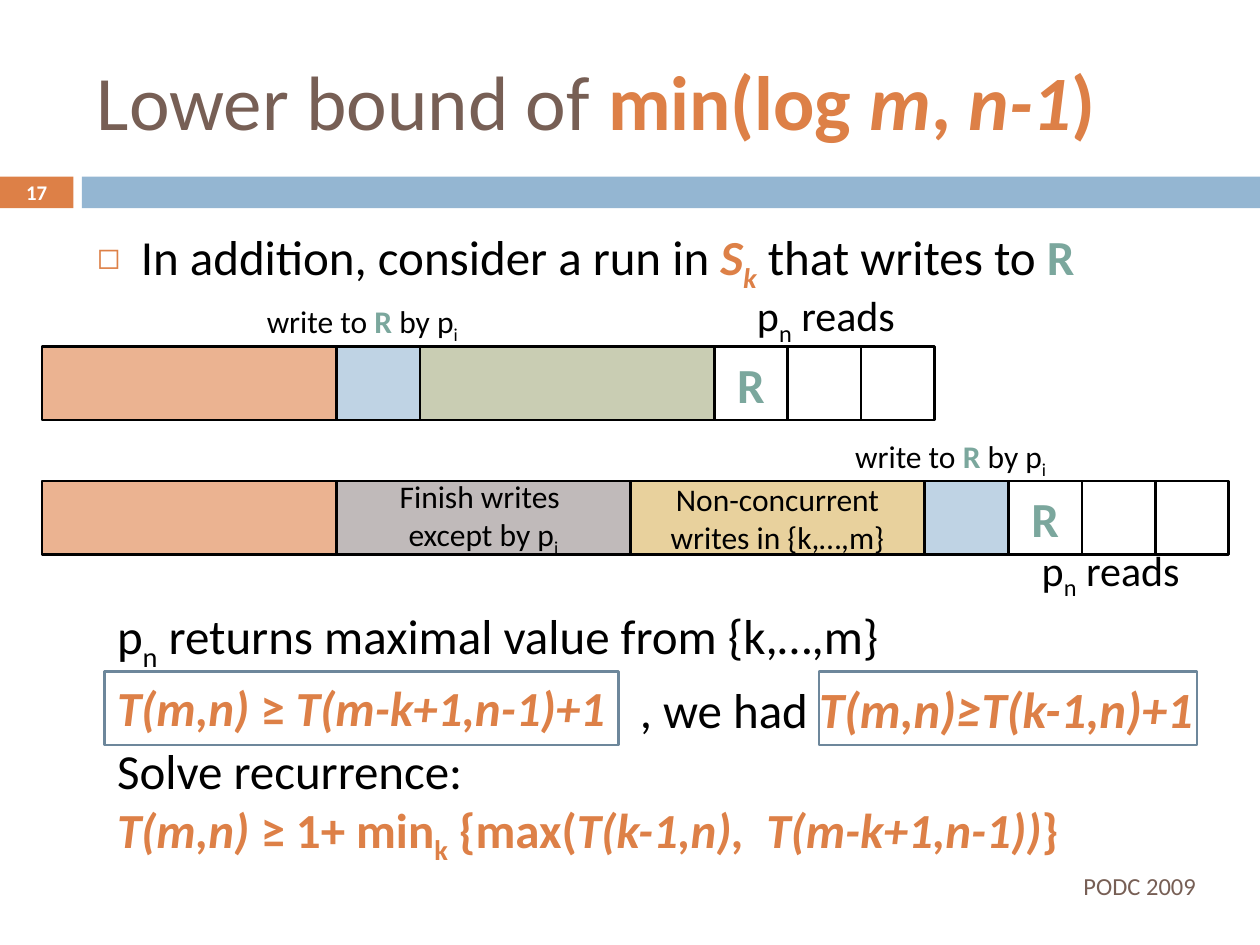
import pptx
import pptx.util
import pptx.dml.color
import pptx.enum.shapes
import pptx.enum.text
import lxml.etree

Cm = pptx.util.Cm
ALIGN = pptx.enum.text.PP_ALIGN
ANCHOR = pptx.enum.text.MSO_ANCHOR
COLOURS = {
    "black": "000000", "white": "FFFFFF", "brown": "775F55",
    "orange": "DD8047", "blue": "94B6D2", "teal": "7BA79D",
    "peach": "EBB391", "sky": "BFD3E4", "sage": "C9CDB3",
    "grey": "C0BABA", "sand": "E8D19D", "slate": "6D879B",
}

deck = pptx.Presentation()
deck.slide_width, deck.slide_height = Cm(25.4), Cm(19.05)
slide = deck.slides.add_slide(deck.slide_layouts[6])


def add_box(left, top, width, height, fill=None, line=None):
    box = slide.shapes.add_shape(
        pptx.enum.shapes.MSO_SHAPE.RECTANGLE, Cm(left), Cm(top), Cm(width), Cm(height))
    box.shadow.inherit = False
    if fill:
        box.fill.solid()
        box.fill.fore_color.rgb = pptx.dml.color.RGBColor.from_string(COLOURS[fill])
    else:
        box.fill.background()
    if line:
        box.line.color.rgb = pptx.dml.color.RGBColor.from_string(COLOURS[line])
        box.line.width = pptx.util.Pt(1.5)
    else:
        box.line.fill.background()
    return box


def write(target, lines, size, align=ALIGN.LEFT, anchor=ANCHOR.TOP, wrap=True):
    if isinstance(target, tuple):
        target = slide.shapes.add_textbox(*map(Cm, target))
    frame = target.text_frame
    frame.word_wrap = wrap
    frame.vertical_anchor = anchor
    for number, pieces in enumerate(lines):
        paragraph = frame.add_paragraph() if number else frame.paragraphs[0]
        paragraph.alignment = align
        for text, colour, style in pieces:
            run = paragraph.add_run()
            run.text = text
            run.font.name = "Calibri"
            run.font.size = pptx.util.Pt(size)
            run.font.color.rgb = pptx.dml.color.RGBColor.from_string(COLOURS[colour])
            run.font.bold = "b" in style
            run.font.italic = "i" in style
            if "s" in style:
                run.font._element.set("baseline", "-25000")
    return frame


add_box(0, 3.56, 1.48, 0.64, "orange")
add_box(1.65, 3.56, 23.75, 0.64, "blue")
write((0, 3.53, 1.48, 0.69), [[("17", "white", "b")]], 11.9, ALIGN.CENTER, ANCHOR.MIDDLE)
write((1.7, 0.64, 22.66, 2.74), [[
    ("Lower bound of ", "brown", ""), ("min(log ", "orange", "b"), ("m", "orange", "bi"),
    (", ", "orange", "b"), ("n-1", "orange", "bi"), (")", "orange", "b"),
]], 44, anchor=ANCHOR.MIDDLE)
write((16.94, 17.35, 7.42, 1.02), [[("PODC 2009", "brown", "")]], 14,
      ALIGN.RIGHT, ANCHOR.MIDDLE)

addition = write((1.7, 4.45, 22.66, 1.6), [[
    ("In addition, consider a run in ", "black", ""), ("S", "orange", "bi"),
    ("k", "orange", "bis"), (" that writes to ", "black", ""), ("R", "teal", "b"),
]], 28).paragraphs[0]
addition.space_before = pptx.util.Pt(7)
bullet = addition._p.get_or_add_pPr()
bullet.set("marL", str(Cm(0.89)))
bullet.set("indent", str(-Cm(0.89)))
namespace = "{http://schemas.openxmlformats.org/drawingml/2006/main}"
bullet_colour = lxml.etree.SubElement(bullet, namespace + "buClr")
lxml.etree.SubElement(bullet_colour, namespace + "srgbClr", val=COLOURS["orange"])
lxml.etree.SubElement(bullet, namespace + "buSzPct", val="60000")
lxml.etree.SubElement(bullet, namespace + "buChar", char="◻")

LONG, SHORT, CELL, ROW_HEIGHT = 5.93, 1.69, 1.48, 1.48
finish_writes = [[("Finish writes ", "black", "")],
                 [("except by p", "black", ""), ("i", "black", "s")]]
later_writes = [[("Non-concurrent writes in {k,…,m}", "black", "")]]
register = [[("R", "teal", "b")]]
registers = [(CELL, None, register, 28), (CELL, None, None, 0), (CELL, None, None, 0)]
runs = [
    (6.99, [(LONG, "peach", None, 0), (SHORT, "sky", None, 0), (LONG, "sage", None, 0)]),
    (9.7, [(LONG, "peach", None, 0), (LONG, "grey", finish_writes, 18),
           (LONG, "sand", later_writes, 18), (SHORT, "sky", None, 0)]),
]
for top, phases in runs:
    left = 0.85
    for width, fill, label, size in phases + registers:
        segment = add_box(left, top, width, ROW_HEIGHT, fill, "black")
        if label:
            write(segment, label, size, ALIGN.CENTER, ANCHOR.MIDDLE)
        left += width

for left, top in [(5.08, 5.97), (16.94, 8.69)]:
    write((left, top, 4.45, 1.02), [[
        ("write to ", "black", ""), ("R ", "teal", "b"),
        ("by p", "black", ""), ("i", "black", "s"),
    ]], 18, ALIGN.CENTER, wrap=False)
for left, top in [(15.01, 5.72), (20.75, 10.85)]:
    write((left, top, 3.4, 1.27), [[
        ("p", "black", ""), ("n", "black", "s"), (" reads", "black", ""),
    ]], 24, wrap=False)

write((2.11, 12.09, 16.08, 1.45), [[
    ("p", "black", ""), ("n", "black", "s"),
    (" returns maximal value from {k,…,m}", "black", ""),
]], 28)
write((2.11, 13.54, 10.41, 1.45), [[
    ("T(m,n)", "orange", "bi"), (" ≥ ", "orange", "b"), ("T(m-k+1,n-1)+1", "orange", "bi"),
]], 28, wrap=False)
earlier_bound = write((12.65, 13.54, 11.68, 1.5), [[
    (", we had ", "black", ""), ("T(m,n)≥T(k-1,n)+1", "orange", "bi"),
]], 28, wrap=False)
earlier_bound.paragraphs[0].runs[1].font.size = pptx.util.Pt(29)
for left, width in [(2.11, 10.36), (16.51, 7.62)]:
    add_box(left, 13.54, width, ROW_HEIGHT, line="slate")
write((2.11, 14.81, 19.63, 2.64), [
    [("Solve recurrence: ", "black", "")],
    [("T(m,n) ", "orange", "bi"), ("≥ 1+ min", "orange", "b"), ("k", "orange", "bs"),
     (" {max(", "orange", "b"), ("T(k-1,n),  T(m-k+1,n-1))", "orange", "bi"),
     ("}", "orange", "b")],
], 28, wrap=False)

deck.save("out.pptx")
